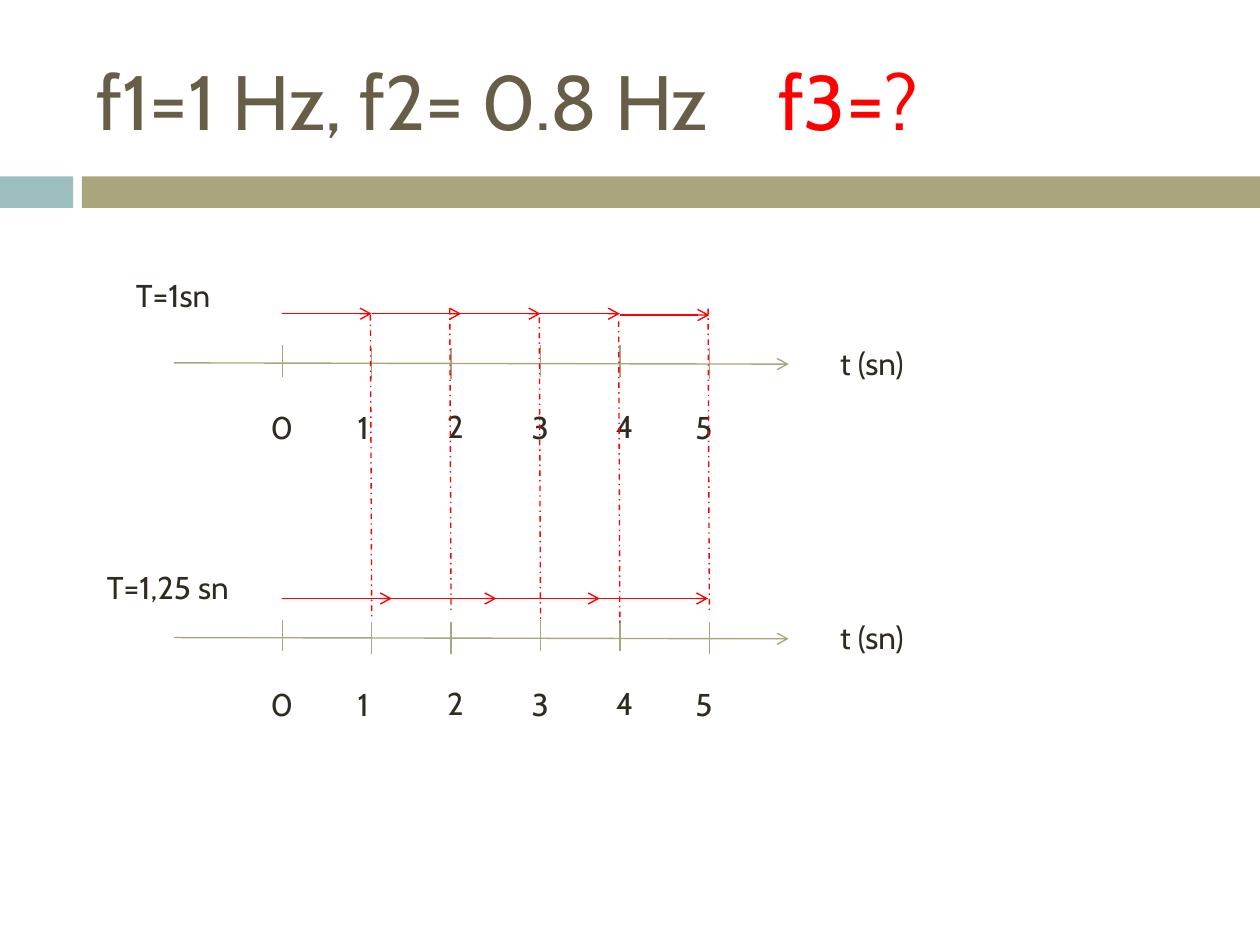
from itertools import accumulate

from lxml import etree
from pptx import Presentation
from pptx.dml.color import RGBColor
from pptx.enum.dml import MSO_LINE
from pptx.enum.shapes import MSO_CONNECTOR, MSO_SHAPE
from pptx.enum.text import MSO_ANCHOR
from pptx.oxml.ns import qn
from pptx.util import Inches, Pt

RECT = MSO_SHAPE.RECTANGLE
STRAIGHT = MSO_CONNECTOR.STRAIGHT
MIDDLE, TOP = MSO_ANCHOR.MIDDLE, MSO_ANCHOR.TOP
DASH_DOT = MSO_LINE.DASH_DOT

WIDTH, HEIGHT = Inches(10), Inches(7.5)
CELL = WIDTH / 100
FONT = "Cabin"
COLORS = {
    "teal": "9CBEBD",
    "olive": "A9A57C",
    "title": "675E47",
    "text": "2F2B20",
    "red": "FF0000",
}
TICKS = [round(x, 1) for x in accumulate([22.4, 7.1, 6.3, 7.1, 6.3, 7.1])]
TICK_RISES = [1.4, 1.2, 1.2, 1.4, 1.4, 1.2]
DIGIT_COLS = [20.5, 27.4, 34.5, 41.2, 47.9, 54.2]
GUIDE_TOPS = [25, 24.5, 25.2, 25.5, 24.5]


def grid(*cells):
    return [round(c * CELL) for c in cells]


def rgb(name):
    return RGBColor.from_string(COLORS[name])


def add_text(s, text, left, top, width, height=4, size=18, color="text", anchor=TOP):
    tf = s.shapes.add_textbox(*grid(left, top, width, height)).text_frame
    tf.word_wrap = True
    tf.vertical_anchor = anchor
    p = tf.paragraphs[0]
    add_run(p, text, size, color)
    return p


def add_run(p, text, size, color):
    r = p.add_run()
    r.text = text
    r.font.name = FONT
    r.font.size = Pt(size)
    r.font.color.rgb = rgb(color)


def add_tab_stop(p, col):
    tabs = etree.SubElement(p._p.get_or_add_pPr(), qn("a:tabLst"))
    etree.SubElement(tabs, qn("a:tab"), pos=str(grid(col)[0]), algn="l")


def add_bar(s, left, width, color):
    sp = s.shapes.add_shape(RECT, *grid(left, 14, width, 2.5))
    sp.shadow.inherit = False
    sp.fill.solid()
    sp.fill.fore_color.rgb = rgb(color)
    sp.line.fill.background()


def add_line(s, x1, y1, x2, y2, color, arrow=False, dash=None):
    c = s.shapes.add_connector(STRAIGHT, *grid(x1, y1, x2, y2))
    c.line.color.rgb = rgb(color)
    c.line.width = Pt(0.79)
    if dash:
        c.line.dash_style = dash
    spPr = c._element.spPr
    if arrow:
        etree.SubElement(spPr.find(qn("a:ln")), qn("a:tailEnd"), type="arrow")
    etree.SubElement(spPr, qn("a:effectLst"))


def add_title(s):
    p = add_text(s, "f1=1 Hz, f2= 0.8 Hz\t", 6.7, 2.5, 89.2, 10.8,
                 size=44, color="title", anchor=MIDDLE)
    add_run(p, "f3=?", 44, "red")
    add_tab_stop(p, 54.1)


def add_time_axis(s, row, digit_row):
    add_line(s, 13.8, row, 62.6, row + 0.1, "olive", arrow=True)
    add_text(s, "t (sn)", 65.7, row - 2, 7.9)
    for x, rise in zip(TICKS, TICK_RISES):
        add_line(s, x, row - rise, x, row - rise + 2.5, "olive")
    for n, col in enumerate(DIGIT_COLS):
        lift = 0.1 if n in (2, 4) else 0
        add_text(s, str(n), col, digit_row - lift, 3.9)


def add_periods(s, starts, row, length):
    for x in starts:
        add_line(s, x, row, x + length, row, "red", arrow=True)


def add_guides(s):
    for x, top in zip(TICKS[1:], GUIDE_TOPS):
        add_line(s, x - 0.1, top, x, top + 24.2, "red", dash=DASH_DOT)


def main():
    prs = Presentation()
    prs.slide_width, prs.slide_height = WIDTH, HEIGHT
    s = prs.slides.add_slide(prs.slide_layouts[6])
    add_bar(s, 0, 5.8, "teal")
    add_bar(s, 6.5, 93.5, "olive")
    add_title(s)
    add_time_axis(s, 28.8, 31.9)
    add_time_axis(s, 50.6, 53.9)
    add_periods(s, [22.4, 29.5, 35.8, 42.1], 24.9, 7.1)
    add_periods(s, [49.2], 25, 7.1)
    add_periods(s, [22.4, 30.7, 38.9, 47.5], 47.5, 8.7)
    add_guides(s)
    add_text(s, "T=1sn", 9.8, 21.4, 10.6)
    add_text(s, "T=1,25 sn", 7.5, 44.6, 14.2)
    prs.save("out.pptx")


if __name__ == "__main__":
    main()
